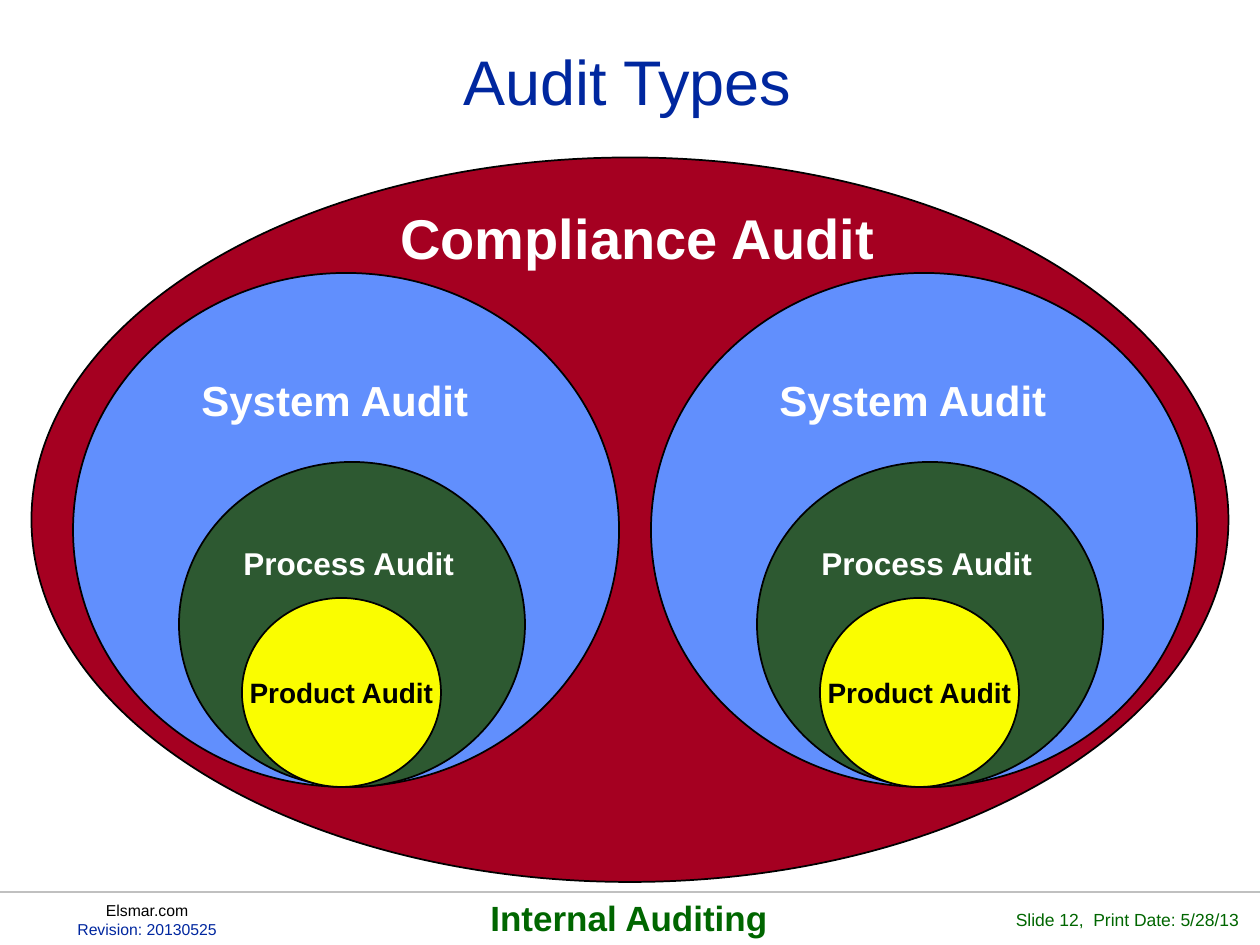
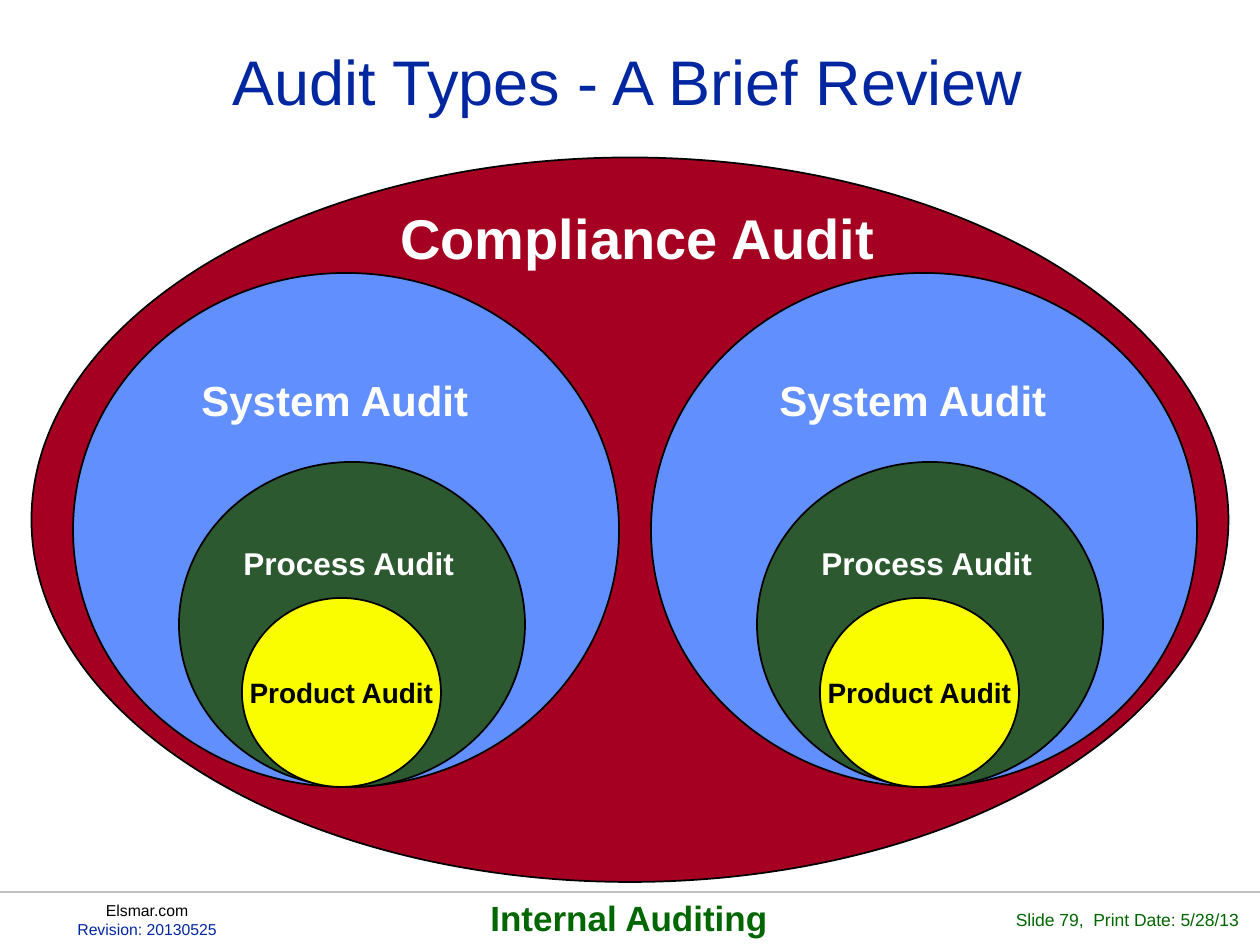
from pptx import Presentation
from pptx.dml.color import RGBColor
from pptx.enum.shapes import MSO_CONNECTOR, MSO_SHAPE
from pptx.enum.text import MSO_ANCHOR, PP_ALIGN
from pptx.oxml.ns import qn
from pptx.util import Pt
from lxml.etree import SubElement

SCALE = 914400 / 126  # EMU in one px
WIDE, HIGH = 1260, 945
PAIR_STEP = 578

BLACK = RGBColor(0x00, 0x00, 0x00)
WHITE = RGBColor(0xFF, 0xFF, 0xFF)
NAVY = RGBColor(0x00, 0x27, 0x9F)
GREEN = RGBColor(0x00, 0x66, 0x00)
GREY = RGBColor(0xC0, 0xC0, 0xC0)
RED = RGBColor(0xA5, 0x00, 0x21)
BLUE = RGBColor(0x61, 0x8F, 0xFD)
FOREST = RGBColor(0x2D, 0x59, 0x31)
YELLOW = RGBColor(0xFA, 0xFD, 0x00)

LEFT, CENTER, RIGHT = PP_ALIGN.LEFT, PP_ALIGN.CENTER, PP_ALIGN.RIGHT
TOP, MIDDLE = MSO_ANCHOR.TOP, MSO_ANCHOR.MIDDLE

TITLE = {"size": Pt(36), "color": NAVY}
SITE = {"size": Pt(9), "color": BLACK}
REVISION = {"size": Pt(9), "color": NAVY}
COURSE = {"size": Pt(20), "color": GREEN, "bold": True}
PRINTED = {"size": Pt(10), "color": GREEN}
COMPLIANCE = {"size": Pt(32), "color": WHITE, "bold": True}
SYSTEM = {"size": Pt(24), "color": WHITE, "bold": True}
PROCESS = {"size": Pt(18), "color": WHITE, "bold": True}
PRODUCT = {"size": Pt(16), "color": BLACK, "bold": True}


def emu(*lengths):
    return [round(length * SCALE) for length in lengths]


def write(shape, lines, align=LEFT, anchor=TOP, wrap=False):
    """Put (text, format) lines into a shape, one paragraph each."""
    frame = shape.text_frame
    frame.word_wrap, frame.vertical_anchor = wrap, anchor
    for i, (text, style) in enumerate(lines):
        para = frame.add_paragraph() if i else frame.paragraphs[0]
        para.alignment = align
        run = para.add_run()
        run.text = text
        run.font.name = "Arial"
        for name, value in style.items():
            if name == "color":
                run.font.color.rgb = value
            else:
                setattr(run.font, name, value)


deck = Presentation()
deck.slide_width, deck.slide_height = emu(WIDE, HIGH)

for title, number in [("Audit Types", 12), ("Audit Types - A Brief Review", 79)]:
    slide = deck.slides.add_slide(deck.slide_layouts[6])
    shapes = slide.shapes

    # Footer and title
    rule = shapes.add_connector(MSO_CONNECTOR.STRAIGHT, *emu(0, 892, WIDE, 892))
    rule.line.color.rgb = GREY
    rule.line.width = Pt(1)
    SubElement(rule._element.spPr, qn("a:effectLst"))
    printed = f"Slide {number},  Print Date: 5/28/13"
    for box, lines, align, anchor in [
        ((0, 895, 294, 50), [("Elsmar.com", SITE), ("Revision: 20130525", REVISION)], CENTER, MIDDLE),
        ((341, 890, 576, 54), [("Internal Auditing", COURSE)], CENTER, TOP),
        ((905, 903, 346, 33), [(printed, PRINTED)], RIGHT, MIDDLE),
        ((92, 25, 1071, 111), [(title, TITLE)], CENTER, MIDDLE),
    ]:
        write(shapes.add_textbox(*emu(*box)), lines, align, anchor, wrap=True)

    # Nested audits: one outer oval around two equal sets
    ovals = [((31.5, 157.5, 1197, 724.5), RED, None)]
    labels = []
    for shift in (0, PAIR_STEP):
        ovals += [
            ((73 + shift, 273, 546, 514), BLUE, None),
            ((179 + shift, 462, 346, 325), FOREST, None),
            ((242 + shift, 598, 199, 189), YELLOW, "Product Audit"),
        ]
        labels += [
            ((231 + shift, 538, 237, 50), "Process Audit", PROCESS),
            ((189 + shift, 368, 294, 63), "System Audit", SYSTEM),
        ]
    labels.append(((388, 197, 501, 79), "Compliance Audit", COMPLIANCE))

    for box, color, text in ovals:
        oval = shapes.add_shape(MSO_SHAPE.OVAL, *emu(*box))
        oval.shadow.inherit = False
        oval.fill.solid()
        oval.fill.fore_color.rgb = color
        oval.line.color.rgb = BLACK
        oval.line.width = Pt(1)
        if text:
            write(oval, [(text, PRODUCT)], CENTER, MIDDLE)
    for box, text, style in labels:
        write(shapes.add_textbox(*emu(*box)), [(text, style)])

deck.save("out.pptx")
